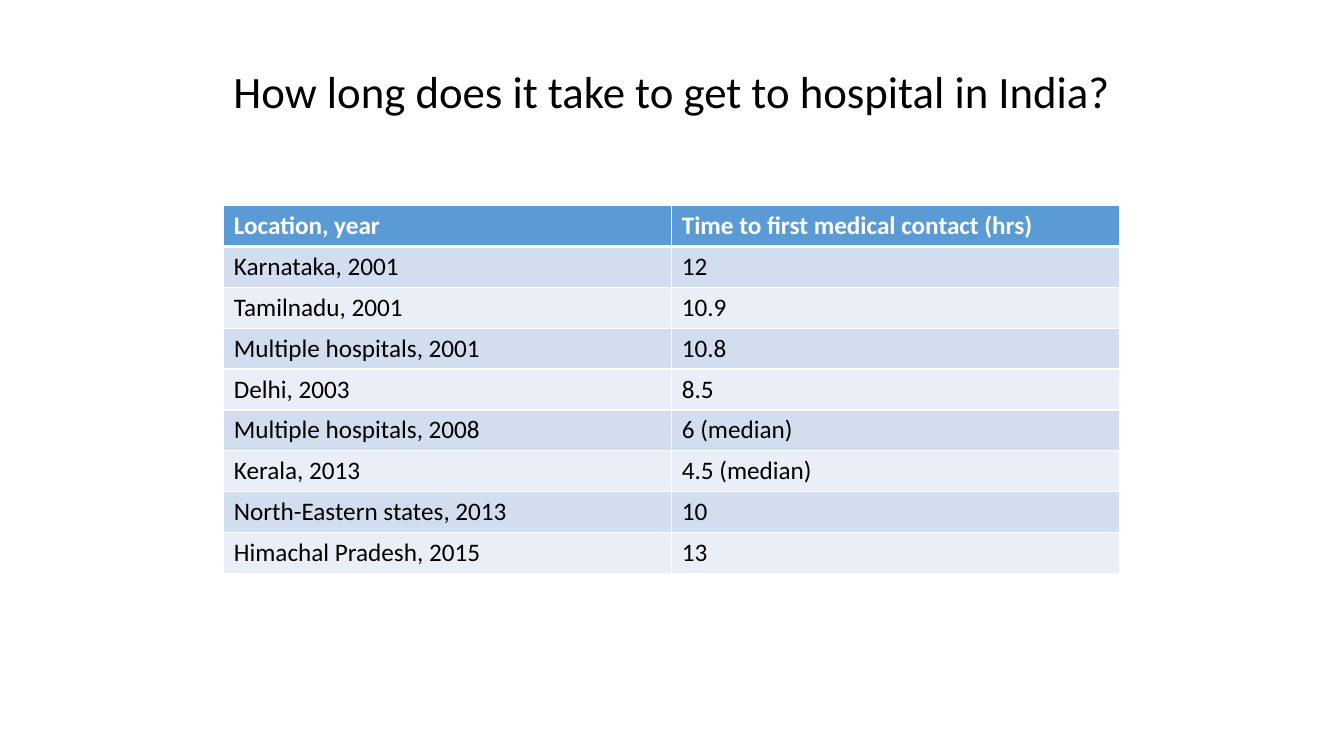
from dataclasses import dataclass

from lxml import etree
from pptx import Presentation
from pptx.dml.color import RGBColor
from pptx.enum.text import MSO_ANCHOR, PP_ALIGN
from pptx.oxml.ns import qn
from pptx.table import _Cell
from pptx.text.text import TextFrame
from pptx.util import Cm, Pt

LEFT, CENTER = PP_ALIGN.LEFT, PP_ALIGN.CENTER
TOP, MIDDLE = MSO_ANCHOR.TOP, MSO_ANCHOR.MIDDLE
TITLE_ONLY = 5

COLORS = {
    "white": "FFFFFF",
    "black": "000000",
    "header": "5B9BD5",
    "dark band": "D2DEEF",
    "light band": "EAEFF7",
}
FONT = "Calibri"
ROW_HEIGHT = Cm(1.03)
COLUMN_WIDTH = Cm(11.29)


@dataclass
class Delay:
    location: str
    hours: str


HEADER = Delay("Location, year", "Time to first medical contact (hrs)")
DELAYS = [
    Delay("Karnataka, 2001", "12"),
    Delay("Tamilnadu, 2001", "10.9"),
    Delay("Multiple hospitals, 2001", "10.8"),
    Delay("Delhi, 2003", "8.5"),
    Delay("Multiple hospitals, 2008", "6 (median)"),
    Delay("Kerala, 2013", "4.5 (median)"),
    Delay("North-Eastern states, 2013", "10"),
    Delay("Himachal Pradesh, 2015", "13"),
]


def write_text(frame: TextFrame, text: str, *, size: int = 18, color: str = "black",
               bold: bool = False, align: PP_ALIGN = LEFT, anchor: MSO_ANCHOR = TOP,
               spacing: float = 1.0) -> None:
    frame.word_wrap = True
    frame.vertical_anchor = anchor
    para = frame.paragraphs[0]
    para.alignment = align
    para.line_spacing = spacing
    span = para.add_run()
    span.text = text
    span.font.name = FONT
    span.font.size = Pt(size)
    span.font.bold = bold
    span.font.color.rgb = RGBColor.from_string(COLORS[color])


def add_borders(cell: _Cell, widths: dict[str, int]) -> None:
    """Draw white cell edges; call before the fill, which must follow them in the XML."""
    properties = cell._tc.get_or_add_tcPr()
    for side, width in widths.items():
        line = etree.SubElement(properties, qn(f"a:ln{side}"), w=str(Pt(width)))
        fill = etree.SubElement(line, qn("a:solidFill"))
        etree.SubElement(fill, qn("a:srgbClr"), val=COLORS["white"])


def format_cell(cell: _Cell, text: str, row: int) -> None:
    is_header = row == 0
    band = "header" if is_header else "dark band" if row % 2 else "light band"
    add_borders(cell, {"L": 1, "R": 1, "T": 3 if row == 1 else 1, "B": 3 if is_header else 1})
    cell.fill.solid()
    cell.fill.fore_color.rgb = RGBColor.from_string(COLORS[band])
    write_text(cell.text_frame, text, bold=is_header, color="white" if is_header else "black")


def main() -> None:
    deck = Presentation()
    deck.slide_width, deck.slide_height = Cm(33.87), Cm(19.05)
    page = deck.slides.add_slide(deck.slide_layouts[TITLE_ONLY])

    title = page.shapes.title
    title.left, title.top, title.width, title.height = Cm(2.33), Cm(1.01), Cm(29.21), Cm(2.72)
    write_text(title.text_frame, "How long does it take to get to hospital in India?",
               size=32, align=CENTER, anchor=MIDDLE, spacing=0.9)

    records = [HEADER, *DELAYS]
    table = page.shapes.add_table(len(records), 2, Cm(5.64), Cm(5.18),
                                  COLUMN_WIDTH * 2, ROW_HEIGHT * len(records)).table
    for row, record in enumerate(records):
        for column, text in enumerate((record.location, record.hours)):
            format_cell(table.cell(row, column), text, row)

    deck.save("out.pptx")


if __name__ == "__main__":
    main()
